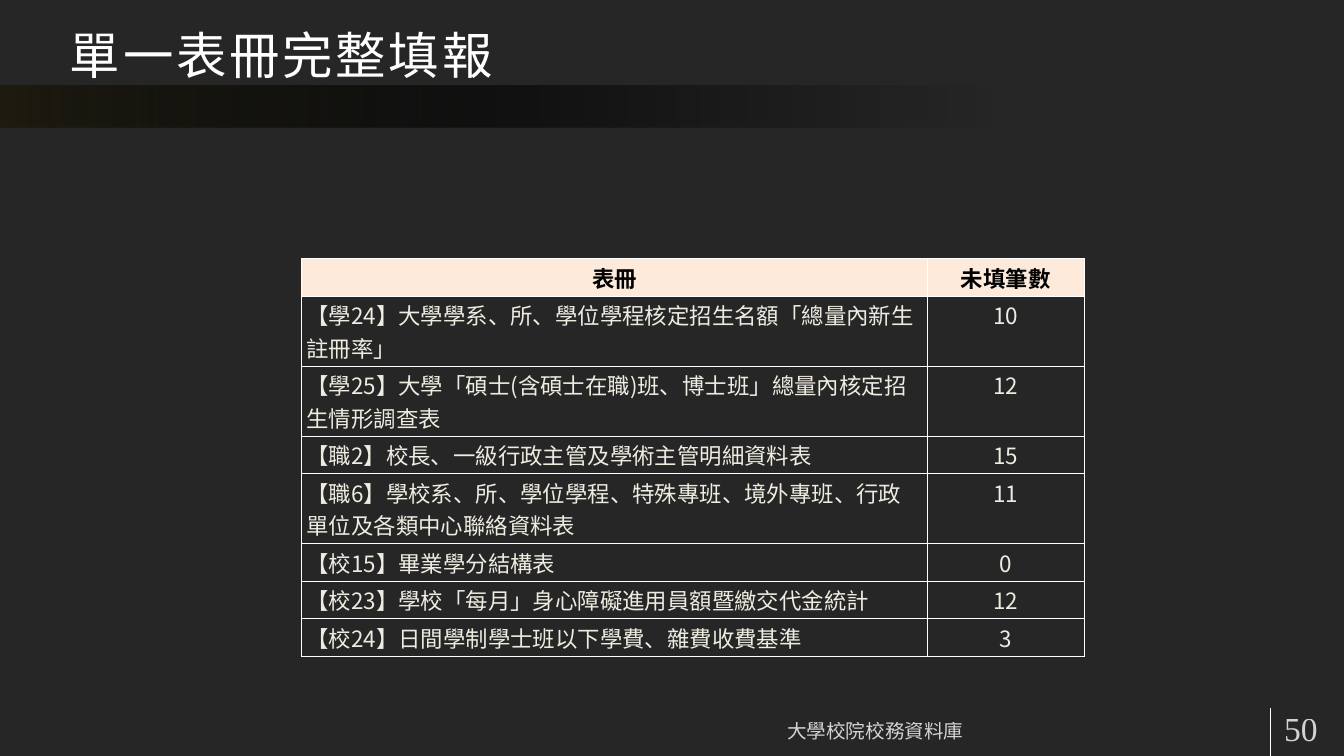
from typing import NamedTuple

from lxml.etree import SubElement as Sub
from pptx import Presentation
from pptx.dml.color import RGBColor as Rgb
from pptx.enum.shapes import MSO_CONNECTOR as Link, MSO_SHAPE as Shape
from pptx.enum.text import MSO_ANCHOR as Anchor, PP_ALIGN as Align
from pptx.oxml.ns import qn
from pptx.util import Inches, Pt

WHITE = Rgb(0xFF, 0xFF, 0xFF)
BLACK = Rgb(0, 0, 0)
DARK = Rgb(0x26, 0x26, 0x26)
OLIVE = Rgb(0x1E, 0x1C, 0x11)
CREAM = Rgb(0xEE, 0xEC, 0xE1)
PEACH = Rgb(0xFD, 0xEA, 0xDA)
SANS = "Noto Sans CJK SC"
SERIF = "Times New Roman"


class Style(NamedTuple):
    size: float
    face: str = SERIF
    color: Rgb = WHITE
    bold: bool = False
    alpha: int = 100
    space: float = 0


class Label(NamedTuple):
    text: str
    box: tuple[float, float, float, float]
    style: Style
    anchor: Anchor
    align: Align = Align.LEFT


class Entry(NamedTuple):
    name: str
    count: str
    high: float


class Stop(NamedTuple):
    place: int
    color: Rgb
    alpha: int = 100


LABELS = [
    Label("單一表冊完整填報", (0.86, 0, 18, 1.35), Style(54, space=3), Anchor.BOTTOM),
    Label("大學校院校務資料庫", (7.16, 10.54, 11.73, 0.6), Style(21, alpha=80),
          Anchor.BOTTOM, Align.CENTER),
    Label("50", (18.93, 10.54, 1.15, 0.6), Style(36, alpha=80), Anchor.MIDDLE),
]
STOPS = [Stop(0, OLIVE), Stop(39, BLACK, 54), Stop(74, BLACK, 0)]
HEAD = Style(24, SANS, BLACK, True)
BODY = Style(24, SANS, CREAM)
LOW, TALL = 0.56, 1.04
ENTRIES = [
    Entry("表冊", "未填筆數", LOW),
    Entry("【學24】大學學系、所、學位學程核定招生名額「總量內新生註冊率」", "10", TALL),
    Entry("【學25】大學「碩士(含碩士在職)班、博士班」總量內核定招生情形調查表", "12", TALL),
    Entry("【職2】校長、一級行政主管及學術主管明細資料表", "15", LOW),
    Entry("【職6】學校系、所、學位學程、特殊專班、境外專班、行政單位及各類中心聯絡資料表",
          "11", TALL),
    Entry("【校15】畢業學分結構表", "0", LOW),
    Entry("【校23】學校「每月」身心障礙進用員額暨繳交代金統計", "12", LOW),
    Entry("【校24】日間學制學士班以下學費、雜費收費基準", "3", LOW),
]


def write(frame, text: str, style: Style, align: Align) -> None:
    para = frame.paragraphs[0]
    para.alignment = align
    run = para.add_run()
    run.text = text
    font = run.font
    font.size, font.bold, font.name = Pt(style.size), style.bold, style.face
    font.color.rgb = style.color
    props = run._r.get_or_add_rPr()
    Sub(props, qn("a:ea")).set("typeface", SANS)
    if style.space:
        props.set("spc", str(int(style.space * 100)))
    if style.alpha < 100:
        tone = props.find(qn("a:solidFill"))[0]
        Sub(tone, qn("a:alpha")).set("val", str(style.alpha * 1000))


def add_label(slide, label: Label) -> None:
    box = slide.shapes.add_textbox(*map(Inches, label.box))
    frame = box.text_frame
    frame.word_wrap = True
    frame.vertical_anchor = label.anchor
    frame.margin_left = frame.margin_right = Inches(0.18)
    frame.margin_top = frame.margin_bottom = Inches(0.09)
    write(frame, label.text, label.style, label.align)


def add_band(slide) -> None:
    band = slide.shapes.add_shape(
        Shape.RECTANGLE, *map(Inches, (0, 1.27, 20, 0.63)))
    band.shadow.inherit = False
    band.line.fill.background()
    band.fill.gradient()
    band.fill.gradient_angle = 0
    group = band._element.spPr.find(qn("a:gradFill")).find(qn("a:gsLst"))
    for old in list(group):
        group.remove(old)
    for stop in STOPS:
        item = Sub(group, qn("a:gs"))
        item.set("pos", str(stop.place * 1000))
        tone = Sub(item, qn("a:srgbClr"))
        tone.set("val", str(stop.color))
        Sub(tone, qn("a:alpha")).set("val", str(stop.alpha * 1000))


def add_rule(slide) -> None:
    rule = slide.shapes.add_connector(
        Link.STRAIGHT, *map(Inches, (18.9, 10.54, 18.9, 11.25)))
    rule.line.color.rgb = WHITE
    rule.line.width = Pt(0.75)
    Sub(rule._element.spPr, qn("a:effectLst"))


def add_edges(cell) -> None:
    props = cell._tc.get_or_add_tcPr()
    for spot, side in enumerate(("L", "R", "T", "B")):
        edge = Sub(props, qn(f"a:ln{side}"))
        edge.set("w", str(Pt(1)))
        fill = Sub(edge, qn("a:solidFill"))
        Sub(fill, qn("a:srgbClr")).set("val", str(WHITE))
        props.insert(spot, edge)


def add_grid(slide) -> None:
    total = sum(entry.high for entry in ENTRIES)
    table = slide.shapes.add_table(
        len(ENTRIES), 2, *map(Inches, (4.49, 3.85, 11.64, total))).table
    table.first_row = table.horz_banding = False
    for col, wide in zip(table.columns, (9.31, 2.33)):
        col.width = Inches(wide)
    for row, entry in enumerate(ENTRIES):
        table.rows[row].height = Inches(entry.high)
        for col, text in enumerate((entry.name, entry.count)):
            cell = table.cell(row, col)
            cell.margin_left = cell.margin_right = Inches(0.07)
            cell.margin_top = cell.margin_bottom = Inches(0.04)
            if row == 0:
                cell.fill.solid()
                cell.fill.fore_color.rgb = PEACH
            else:
                cell.fill.background()
            add_edges(cell)
            align = Align.CENTER if row == 0 or col == 1 else Align.LEFT
            write(cell.text_frame, text, BODY if row else HEAD, align)


def main() -> None:
    deck = Presentation()
    deck.slide_width, deck.slide_height = Inches(20), Inches(11.25)
    slide = deck.slides.add_slide(deck.slide_layouts[6])
    slide.background.fill.solid()
    slide.background.fill.fore_color.rgb = DARK
    add_band(slide)
    add_rule(slide)
    for label in LABELS:
        add_label(slide, label)
    add_grid(slide)
    deck.save("out.pptx")


if __name__ == "__main__":
    main()
